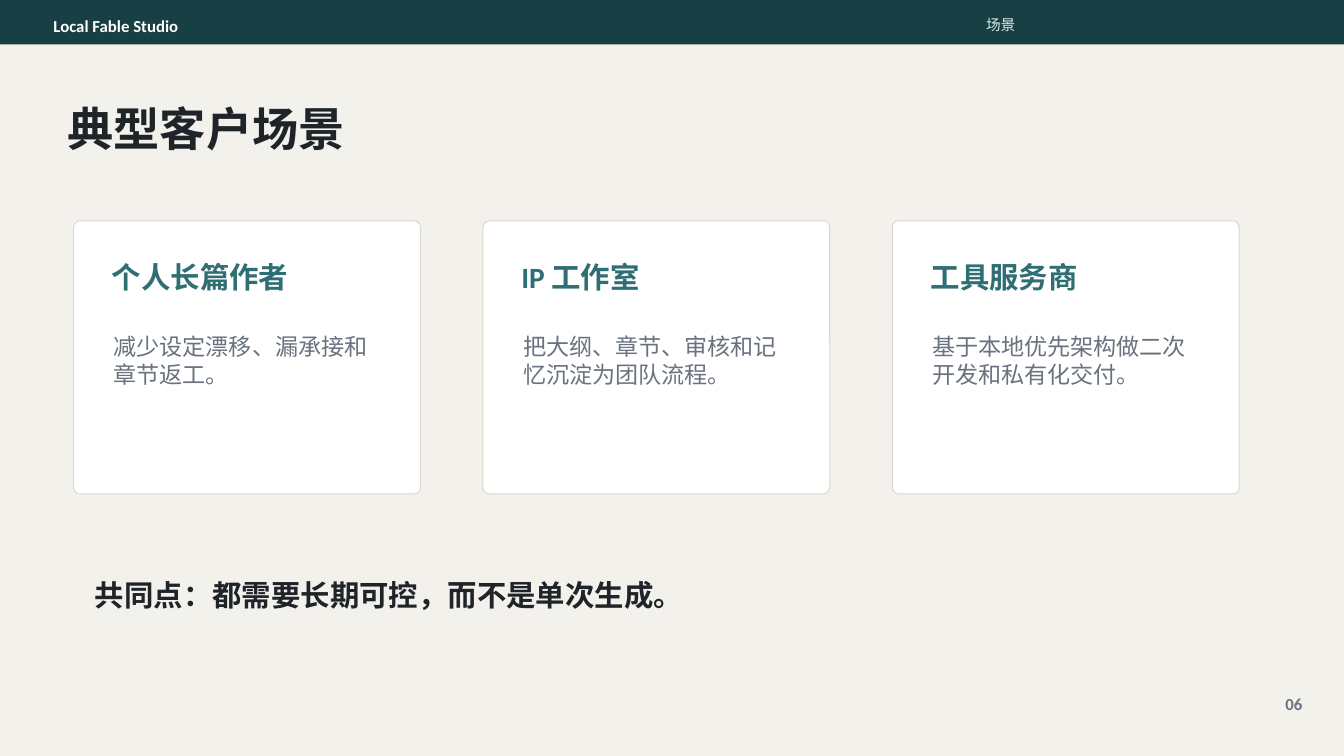
from dataclasses import dataclass

from pptx import Presentation
from pptx.dml.color import RGBColor
from pptx.enum.shapes import MSO_SHAPE
from pptx.enum.text import MSO_ANCHOR, MSO_AUTO_SIZE, PP_ALIGN
from pptx.shapes.autoshape import Shape
from pptx.slide import Slide
from pptx.util import Inches, Pt

RECTANGLE = MSO_SHAPE.RECTANGLE
ROUNDED = MSO_SHAPE.ROUNDED_RECTANGLE
TOP = MSO_ANCHOR.TOP
NO_AUTOFIT = MSO_AUTO_SIZE.NONE
LEFT = PP_ALIGN.LEFT

PAPER = RGBColor(0xF3, 0xF1, 0xEC)
DARK_TEAL = RGBColor(0x18, 0x3F, 0x43)
TEAL = RGBColor(0x2F, 0x6F, 0x73)
PALE_TEAL = RGBColor(0xDB, 0xE9, 0xE8)
WHITE = RGBColor(0xFF, 0xFF, 0xFF)
BORDER = RGBColor(0xDD, 0xD8, 0xCF)
INK = RGBColor(0x1F, 0x24, 0x28)
GRAY = RGBColor(0x69, 0x72, 0x7E)

FONT = "Calibri"
SLIDE_WIDTH, SLIDE_HEIGHT = 13.33, 7.5
CARD_LEFT, CARD_TOP, CARD_PITCH = 0.73, 2.19, 4.06
CARD_WIDTH, CARD_HEIGHT = 3.44, 2.71
FRAME_FORMAT = {
    "word_wrap": True,
    "auto_size": NO_AUTOFIT,
    "vertical_anchor": TOP,
    "margin_left": Inches(0.09),
    "margin_right": Inches(0.09),
    "margin_top": Inches(0.05),
    "margin_bottom": Inches(0.05),
}


@dataclass(frozen=True)
class Box:
    left: float
    top: float
    width: float
    height: float

    def place(self, shape: Shape) -> None:
        for name in ("left", "top", "width", "height"):
            setattr(shape, name, Inches(getattr(self, name)))


@dataclass(frozen=True)
class TextStyle:
    size: float
    color: RGBColor
    bold: bool = False


@dataclass(frozen=True)
class Label:
    text: str
    box: Box
    style: TextStyle


@dataclass(frozen=True)
class Scenario:
    customer: str
    benefit: str


HEADING = TextStyle(21, TEAL, True)
BODY = TextStyle(16.5, GRAY)
TITLE = Label("典型客户场景", Box(0.58, 0.94, 6.04, 0.6), TextStyle(33, INK, True))
LABELS = (
    Label("Local Fable Studio", Box(0.44, 0.11, 2.92, 0.25), TextStyle(12, WHITE, True)),
    Label("场景", Box(9.69, 0.11, 2.6, 0.25), TextStyle(10.5, PALE_TEAL)),
    Label("06", Box(12.66, 6.83, 0.4, 0.23), TextStyle(12, GRAY, True)),
    Label("共同点：都需要长期可控，而不是单次生成。",
          Box(0.85, 5.68, 8.85, 0.4), TextStyle(21, INK, True)),
)
SCENARIOS = (
    Scenario("个人长篇作者", "减少设定漂移、漏承接和章节返工。"),
    Scenario("IP 工作室", "把大纲、章节、审核和记忆沉淀为团队流程。"),
    Scenario("工具服务商", "基于本地优先架构做二次开发和私有化交付。"),
)


def write_label(shape: Shape, label: Label) -> None:
    label.box.place(shape)
    frame = shape.text_frame
    for name, value in FRAME_FORMAT.items():
        setattr(frame, name, value)
    paragraph = frame.paragraphs[0]
    paragraph.alignment = LEFT
    run = paragraph.add_run()
    run.text = label.text
    font_format = {"name": FONT, "size": Pt(label.style.size), "bold": label.style.bold}
    for name, value in font_format.items():
        setattr(run.font, name, value)
    run.font.color.rgb = label.style.color


def add_label(slide: Slide, label: Label) -> None:
    write_label(slide.shapes.add_textbox(0, 0, 0, 0), label)


def add_panel(slide: Slide, kind: MSO_SHAPE, box: Box, fill: RGBColor) -> Shape:
    """Add a filled shape with neither outline nor shadow."""
    shape = slide.shapes.add_shape(kind, 0, 0, 0, 0)
    box.place(shape)
    shape.shadow.inherit = False
    shape.fill.solid()
    shape.fill.fore_color.rgb = fill
    shape.line.fill.background()
    return shape


def add_card(slide: Slide, column: int, scenario: Scenario) -> None:
    left = CARD_LEFT + column * CARD_PITCH
    card = add_panel(slide, ROUNDED, Box(left, CARD_TOP, CARD_WIDTH, CARD_HEIGHT), WHITE)
    card.adjustments[0] = 0.023
    card.line.color.rgb = BORDER
    card.line.width = Pt(0.75)
    add_label(slide, Label(scenario.customer,
                           Box(left + 0.29, CARD_TOP + 0.33, 2.81, 0.44), HEADING))
    add_label(slide, Label(scenario.benefit,
                           Box(left + 0.31, CARD_TOP + 1.06, 2.71, 0.94), BODY))


def main() -> None:
    presentation = Presentation()
    presentation.slide_width = Inches(SLIDE_WIDTH)
    presentation.slide_height = Inches(SLIDE_HEIGHT)
    title_only = presentation.slide_layouts.get_by_name("Title Only")
    slide = presentation.slides.add_slide(title_only)
    slide.background.fill.solid()
    slide.background.fill.fore_color.rgb = PAPER

    add_panel(slide, RECTANGLE, Box(0, 0, SLIDE_WIDTH, 0.44), DARK_TEAL)
    write_label(slide.shapes.title, TITLE)
    for label in LABELS:
        add_label(slide, label)
    for column, scenario in enumerate(SCENARIOS):
        add_card(slide, column, scenario)

    presentation.save("out.pptx")


if __name__ == "__main__":
    main()
